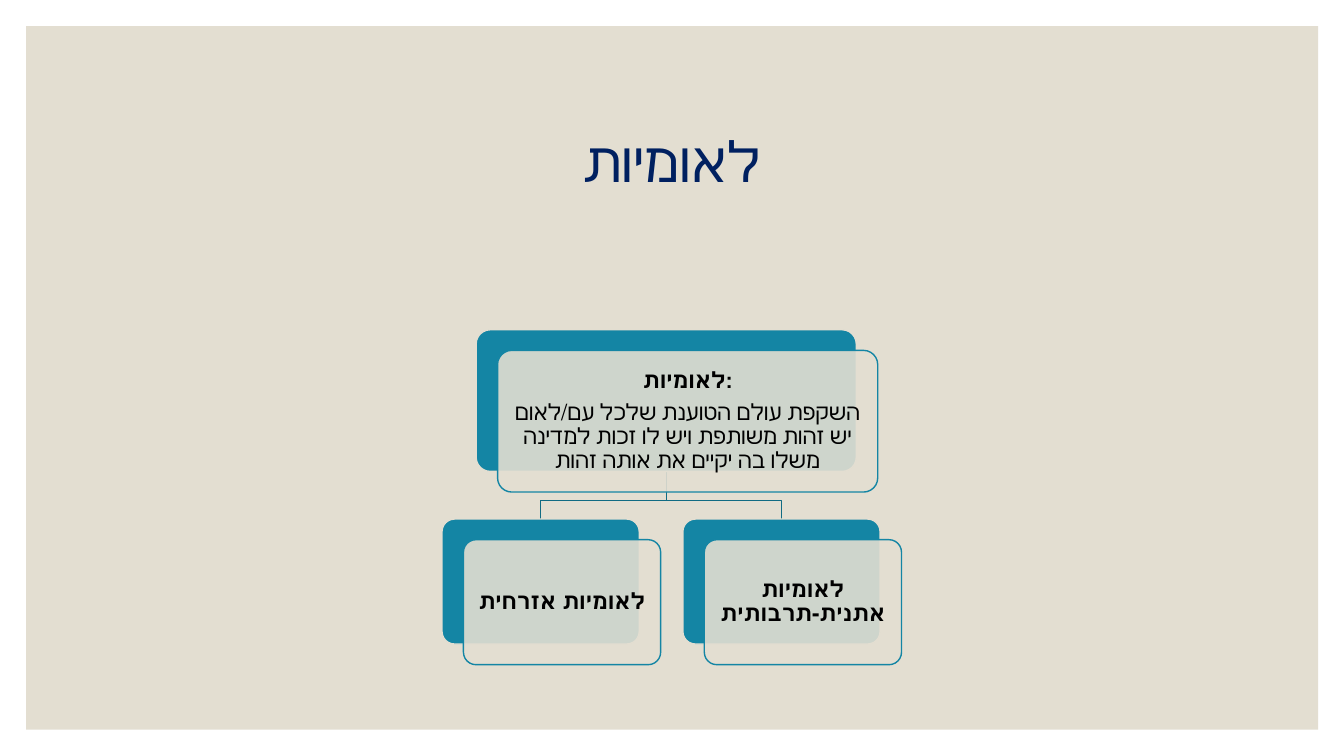
from dataclasses import dataclass

from lxml import etree
from pptx import Presentation
from pptx.dml.color import RGBColor
from pptx.enum.lang import MSO_LANGUAGE_ID
from pptx.enum.shapes import MSO_SHAPE
from pptx.enum.text import MSO_ANCHOR, PP_ALIGN
from pptx.oxml.ns import qn
from pptx.util import Cm, Pt

RECT = MSO_SHAPE.RECTANGLE
ROUND = MSO_SHAPE.ROUNDED_RECTANGLE
MIDDLE = MSO_ANCHOR.MIDDLE
CENTER = PP_ALIGN.CENTER
HEBREW = MSO_LANGUAGE_ID.HEBREW

FONT = "TeX Gyre Adventor"
SCRIPT = "+mn-cs"  # theme face for Hebrew letters
SAND, TEAL, DARK = "E3DED1", "1485A4", "106B83"
NAVY, BLACK = "002060", "000000"
RIGHT, DOWN = 0.54, 0.52  # offset of the front card from the back card, cm
PAD = 0.1     # gap between the front card and its text, cm
DROP = 0.73   # from the root card down to the branch, cm


@dataclass
class Line:
    text: str
    bold: bool = True


@dataclass
class Box:
    left: float
    top: float
    width: float
    height: float

    @property
    def mid(self) -> float:
        return self.left + self.width / 2

    def inset(self, dist: float) -> "Box":
        return Box(self.left + dist, self.top + dist,
                   self.width - 2 * dist, self.height - 2 * dist)

    def move(self, right: float, down: float) -> "Box":
        return Box(self.left + right, self.top + down, self.width, self.height)

    def cm(self) -> list:
        return [Cm(n) for n in (self.left, self.top, self.width, self.height)]


@dataclass
class Card:
    box: Box
    lines: list[Line]


ROOT = Card(Box(12, 8.31, 9.58, 3.57), [
    Line("לאומיות:"),
    Line("השקפת עולם הטוענת שלכל עם/לאום יש זהות משותפת "
         "ויש לו זכות למדינה משלו בה יקיים את אותה זהות", False),
])
LEAVES = [
    Card(Box(11.14, 13.08, 4.97, 3.15), [Line("לאומיות אזרחית")]),
    Card(Box(17.21, 13.08, 4.97, 3.15), [Line("לאומיות אתנית-תרבותית")]),
]


def color(code: str) -> RGBColor:
    return RGBColor.from_string(code)


def add_box(shapes, kind, box: Box, fill: str, line: str = "", alpha: int = 100):
    shape = shapes.add_shape(kind, *box.cm())
    shape.shadow.inherit = False
    shape.fill.solid()
    shape.fill.fore_color.rgb = color(fill)
    if alpha < 100:
        tone = shape.fill._xPr.find(".//" + qn("a:srgbClr"))
        etree.SubElement(tone, qn("a:alpha"), val=str(alpha * 1000))
    if line:
        shape.line.color.rgb = color(line)
        shape.line.width = Pt(1)
    else:
        shape.line.fill.background()
    return shape


def add_text(shapes, box: Box, lines: list[Line], size: int, ink: str,
             inset: float, after: float = 0, rtl: bool = False) -> None:
    frame = shapes.add_textbox(*box.cm()).text_frame
    frame.word_wrap = True
    frame.vertical_anchor = MIDDLE
    frame.margin_left = frame.margin_right = Cm(inset)
    frame.margin_top = frame.margin_bottom = Cm(inset)
    for i, line in enumerate(lines):
        para = frame.add_paragraph() if i else frame.paragraphs[0]
        para.alignment = CENTER
        para.line_spacing = 0.9
        para.space_after = Pt(after)
        if rtl:
            para._p.get_or_add_pPr().set("rtl", "1")
        run = para.add_run()
        run.text = line.text
        font = run.font
        font.name, font.size, font.bold = FONT, Pt(size), line.bold
        font.color.rgb = color(ink)
        font.language_id = HEBREW
        etree.SubElement(run._r.get_or_add_rPr(), qn("a:cs"), typeface=SCRIPT)


def add_card(shapes, card: Card) -> None:
    front = card.box.move(RIGHT, DOWN)
    for box, fill, line, alpha in ((card.box, TEAL, SAND, 100),
                                   (front, SAND, TEAL, 90)):
        add_box(shapes, ROUND, box, fill, line, alpha).adjustments[0] = 0.1
    add_text(shapes, front.inset(PAD), card.lines, 16, BLACK, 0.18, 5.6)


def add_branch(shapes, start: Box, end: Box) -> None:
    base = start.top + start.height
    bend = base + DROP
    path = [(start.mid, base), (start.mid, bend), (end.mid, bend), (end.mid, end.top)]
    spots = [(Cm(x), Cm(y)) for x, y in path]
    pen = shapes.build_freeform(*spots[0])
    pen.add_line_segments(spots[1:], close=False)
    shape = pen.convert_to_shape()
    shape.shadow.inherit = False
    shape.fill.background()
    shape.line.color.rgb = color(DARK)
    shape.line.width = Pt(1)


def main() -> None:
    deck = Presentation()
    deck.slide_width, deck.slide_height = Cm(33.87), Cm(19.05)
    shapes = deck.slides.add_slide(deck.slide_layouts[6]).shapes
    add_box(shapes, RECT, Box(0.66, 0.66, 32.56, 17.73), SAND)
    add_text(shapes, Box(3.29, 2.3, 27.3, 3.68), [Line("לאומיות", False)],
             40, NAVY, 0.25, rtl=True)
    for leaf in reversed(LEAVES):
        add_branch(shapes, ROOT.box, leaf.box)
    for card in (ROOT, *LEAVES):
        add_card(shapes, card)
    deck.save("out.pptx")


if __name__ == "__main__":
    main()
